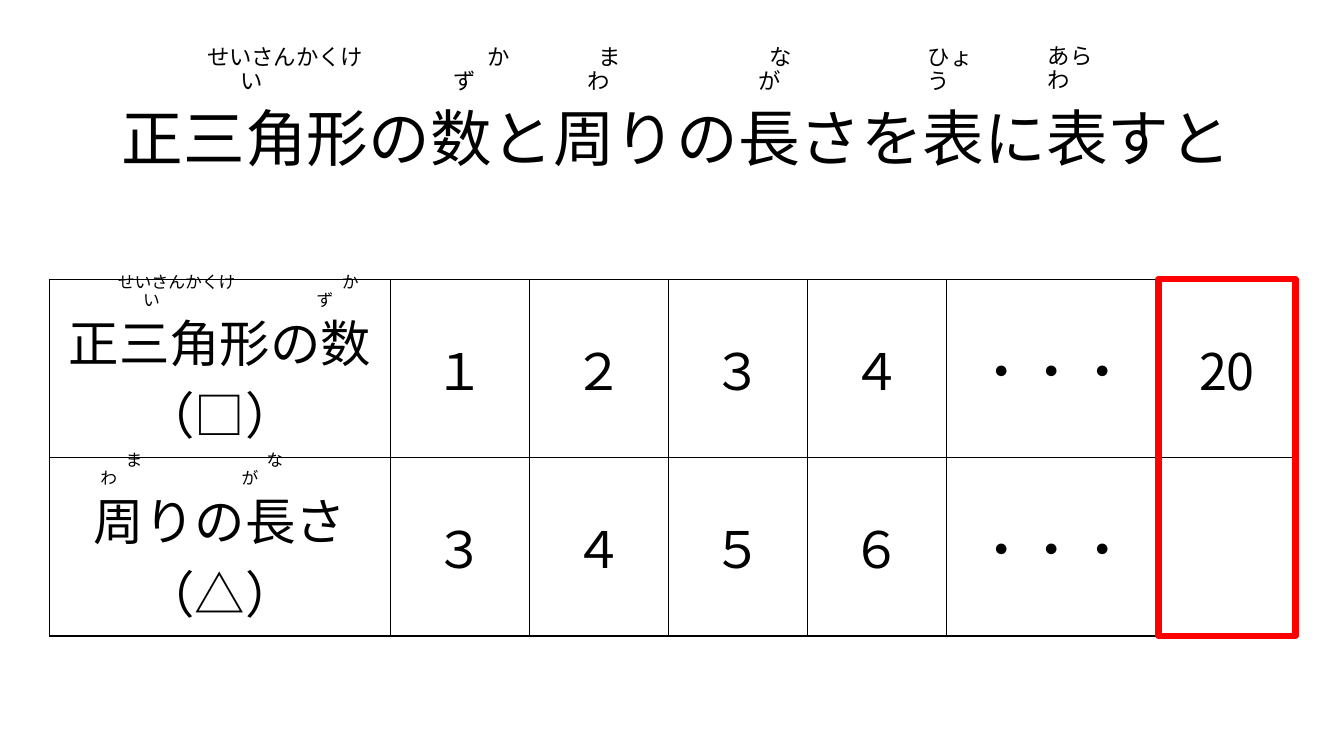
from dataclasses import dataclass
from typing import Any

from lxml.etree import SubElement
from pptx import Presentation
from pptx.dml.color import RGBColor
from pptx.enum.shapes import MSO_SHAPE
from pptx.enum.text import MSO_ANCHOR, PP_ALIGN
from pptx.oxml.ns import qn
from pptx.util import Pt

PX = 9144  # EMU in one px; 100 px to the inch
PX_PER_PT = 100 / 72
FONT = "Noto Sans CJK JP"
BLACK, RED = "000000", "FF0000"
INSET = 10
COLUMNS = [338, 138, 138, 138, 138, 209, 138]
ROW_HEIGHT = 177
ROWS = [
    ["正三角形の数（□）", "１", "２", "３", "４", "・・・", "20"],
    ["周りの長さ（△）", "３", "４", "５", "６", "・・・", ""],
]


@dataclass(frozen=True)
class Box:
    left: int
    top: int
    width: int
    height: int

    def emu(self) -> list[int]:
        return [px(v) for v in (self.left, self.top, self.width, self.height)]


@dataclass(frozen=True)
class Reading:
    """Furigana whose last kana drops to a second line, `shift` ems left of centre."""
    kana: str
    box: Box
    size: int
    shift: int


READINGS = [
    Reading("せいさんかくけい", Box(171, 62, 202, 37), 16, 1),
    Reading("かず", Box(438, 62, 91, 37), 16, 1),
    Reading("なが", Box(723, 62, 81, 37), 16, 0),
    Reading("まわ", Box(553, 62, 81, 37), 16, 0),
    Reading("ひょう", Box(886, 62, 91, 37), 16, 0),
    Reading("あらわ", Box(1001, 61, 99, 37), 16, 0),
    Reading("せいさんかくけい", Box(66, 276, 202, 37), 12, 1),
    Reading("かず", Box(297, 275, 84, 38), 12, 1),
    Reading("まわ", Box(89, 454, 71, 35), 12, 1),
    Reading("なが", Box(229, 454, 71, 35), 12, 1),
]


def px(value: float) -> int:
    return round(value * PX)


def color(value: str) -> RGBColor:
    return RGBColor.from_string(value)


def apply(target: Any, formats: dict[str, Any]) -> None:
    for name, value in formats.items():
        setattr(target, name, value)


def write(frame: Any, text: str, size: int, **paragraph_formats: Any) -> Any:
    paragraph = frame.paragraphs[0]
    apply(paragraph, {"alignment": PP_ALIGN.CENTER, **paragraph_formats})
    run = paragraph.add_run()
    run.text = text
    apply(run.font, {"size": Pt(size), "name": FONT})
    run.font.color.rgb = color(BLACK)
    SubElement(run.font._element, qn("a:ea"), typeface=FONT)
    return paragraph


def add_label(slide: Any, box: Box, **frame_formats: Any) -> Any:
    frame = slide.shapes.add_textbox(*box.emu()).text_frame
    apply(frame, {"word_wrap": True, **frame_formats})
    return frame


def add_reading(slide: Any, reading: Reading) -> None:
    em = reading.size * PX_PER_PT
    upper_count = len(reading.kana) - 1
    centre = reading.box.width / 2
    upper = centre - em * (upper_count - 1) / 2
    lower = centre - em * (reading.shift + 0.5)
    # Room for the upper line and a little slack, but not for one more kana
    right_inset = reading.box.width - upper - em * (upper_count + 0.3)
    frame = add_label(slide, reading.box, vertical_anchor=MSO_ANCHOR.BOTTOM,
                      margin_left=0, margin_right=px(right_inset))
    paragraph = write(frame, reading.kana, reading.size,
                      alignment=PP_ALIGN.LEFT, line_spacing=0.9)
    properties = paragraph._p.get_or_add_pPr()
    properties.set("marL", str(px(lower)))
    properties.set("indent", str(px(upper - lower)))


def add_borders(cell: Any) -> None:
    properties = cell._tc.get_or_add_tcPr()
    for index, side in enumerate(("lnL", "lnR", "lnT", "lnB")):
        line = properties.makeelement(qn(f"a:{side}"), {"w": str(Pt(1))})
        fill = SubElement(line, qn("a:solidFill"))
        SubElement(fill, qn("a:srgbClr"), val=BLACK)
        properties.insert(index, line)


def add_value_table(slide: Any) -> None:
    box = Box(49, 277, sum(COLUMNS), ROW_HEIGHT * len(ROWS))
    table = slide.shapes.add_table(len(ROWS), len(COLUMNS), *box.emu()).table
    apply(table, {"first_row": False, "horz_banding": False})
    for column, width in zip(table.columns, COLUMNS):
        column.width = px(width)
    for row, texts in zip(table.rows, ROWS):
        row.height = px(ROW_HEIGHT)
        for index, (cell, text) in enumerate(zip(row.cells, texts)):
            cell.vertical_anchor = MSO_ANCHOR.MIDDLE
            if index == 0:
                apply(cell, {"margin_left": px(INSET), "margin_right": px(INSET),
                             "margin_top": px(20), "margin_bottom": px(4)})
            cell.fill.background()
            add_borders(cell)
            if text:
                write(cell.text_frame, text, 36)


def add_answer_frame(slide: Any) -> None:
    answer = slide.shapes.add_shape(MSO_SHAPE.RECTANGLE, *Box(1149, 277, 136, 354).emu())
    answer.shadow.inherit = False
    answer.fill.background()
    answer.line.color.rgb = color(RED)
    answer.line.width = Pt(4.5)


def main() -> None:
    presentation = Presentation()
    apply(presentation, {"slide_width": px(1333), "slide_height": px(750)})
    slide = presentation.slides.add_slide(presentation.slide_layouts[6])
    add_value_table(slide)
    heading = add_label(slide, Box(46, 68, 1251, 145), vertical_anchor=MSO_ANCHOR.MIDDLE)
    write(heading, "正三角形の数と周りの長さを表に表すと", 44, line_spacing=0.9)
    add_answer_frame(slide)
    for reading in READINGS:
        add_reading(slide, reading)
    presentation.save("out.pptx")


if __name__ == "__main__":
    main()
